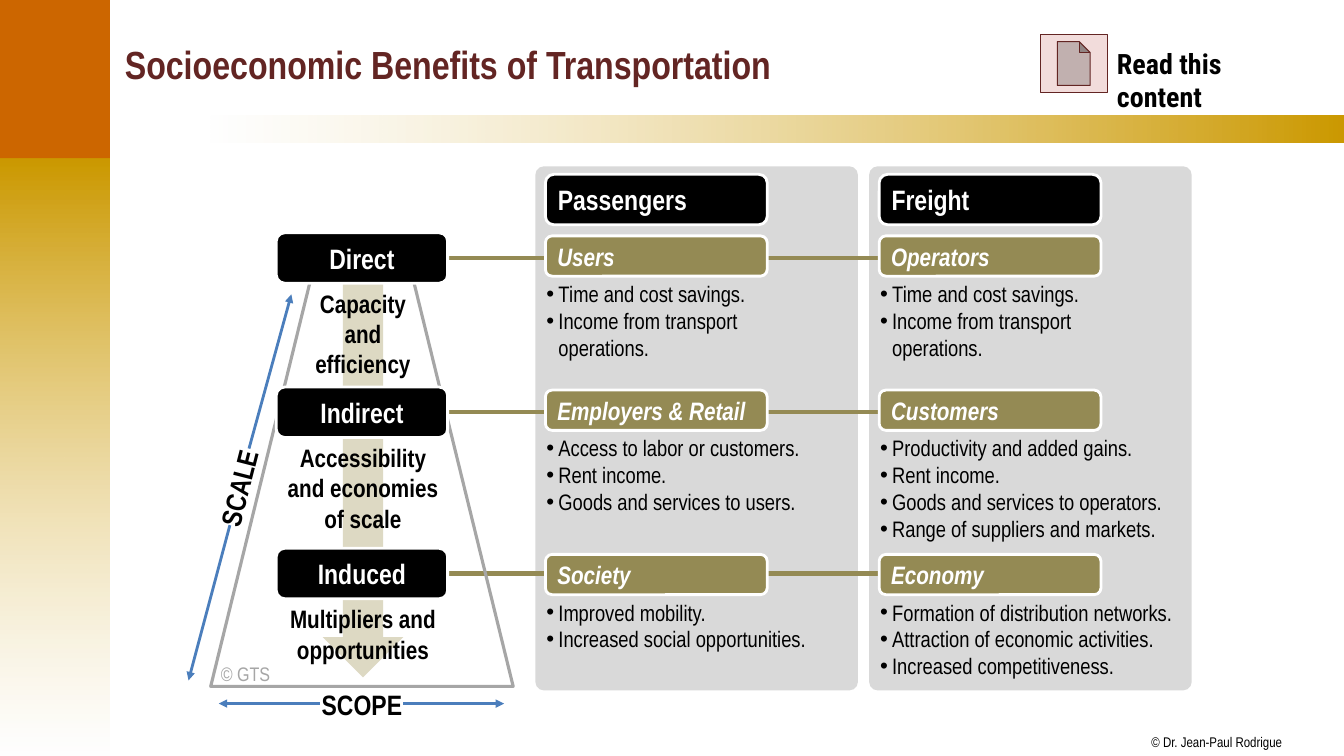
from lxml import etree
from pptx import Presentation
from pptx.dml.color import RGBColor
from pptx.enum.shapes import MSO_CONNECTOR, MSO_SHAPE
from pptx.enum.text import MSO_ANCHOR, PP_ALIGN
from pptx.oxml.ns import qn
from pptx.util import Inches, Pt

RECT, ROUNDED = MSO_SHAPE.RECTANGLE, MSO_SHAPE.ROUNDED_RECTANGLE
TRAPEZOID, DOWN_ARROW = MSO_SHAPE.TRAPEZOID, MSO_SHAPE.DOWN_ARROW
DOCUMENT_BUTTON = MSO_SHAPE.ACTION_BUTTON_DOCUMENT
STRAIGHT = MSO_CONNECTOR.STRAIGHT
LEFT, CENTER = PP_ALIGN.LEFT, PP_ALIGN.CENTER
TOP, MIDDLE = MSO_ANCHOR.TOP, MSO_ANCHOR.MIDDLE

BLACK = RGBColor(0x00, 0x00, 0x00)
WHITE = RGBColor(0xFF, 0xFF, 0xFF)
GOLD = RGBColor(0xCC, 0x99, 0x00)
ORANGE = RGBColor(0xCC, 0x66, 0x00)
MAROON = RGBColor(0x63, 0x25, 0x23)
PINK = RGBColor(0xF2, 0xDC, 0xDB)
PANEL_GRAY = RGBColor(0xD9, 0xD9, 0xD9)
OUTLINE_GRAY = RGBColor(0xA6, 0xA6, 0xA6)
OLIVE = RGBColor(0x94, 0x8A, 0x54)
SAND = RGBColor(0xDD, 0xD9, 0xC3)
BLUE = RGBColor(0x4B, 0x7E, 0xBC)

NARROW, ROBOTO = "Arial Narrow", "Roboto Condensed"

TITLE = "Socioeconomic Benefits of Transportation"
COLUMNS = ["Passengers", "Freight"]
LEVELS = [
    {
        "name": "Direct", "caption": "Capacity and efficiency",
        "caption_width": 1.2, "top": 2.31, "bar_top": 2.34, "list_width": 2.81,
        "groups": [
            ("Users", ["Time and cost savings.", "Income from transport operations."]),
            ("Operators", ["Time and cost savings.", "Income from transport operations."]),
        ],
    },
    {
        "name": "Indirect", "caption": "Accessibility and economies of scale",
        "caption_width": 1.87, "top": 3.84, "bar_top": 3.87, "list_width": 3.19,
        "groups": [
            ("Employers & Retail", ["Access to labor or customers.", "Rent income.",
                                    "Goods and services to users."]),
            ("Customers", ["Productivity and added gains.", "Rent income.",
                           "Goods and services to operators.",
                           "Range of suppliers and markets."]),
        ],
    },
    {
        "name": "Induced", "caption": "Multipliers and opportunities",
        "caption_width": 1.87, "top": 5.44, "bar_top": 5.5, "list_width": 3.19,
        "groups": [
            ("Society", ["Improved mobility.", "Increased social opportunities."]),
            ("Economy", ["Formation of distribution networks.",
                         "Attraction of economic activities.",
                         "Increased competitiveness."]),
        ],
    },
]
AXIS_ARROWS = [
    ((4, 6.98), (5, 6.98)),
    ((3.17, 6.98), (2.17, 6.98)),
    ((2.28, 5.21), (1.87, 6.75)),
    ((2.47, 4.45), (2.89, 2.92)),
]

COLUMN_LEFT, COLUMN_STEP = 5.31, 3.31
PILL_LEFT, PILL_WIDTH, PILL_HEIGHT = 2.74, 1.7, 0.5
BAR_WIDTH, BAR_HEIGHT = 2.2, 0.4
CAPTION_CENTER = 3.6

deck = Presentation()
deck.slide_width, deck.slide_height = Inches(13.33), Inches(7.5)
page = deck.slides.add_slide(deck.slide_layouts[6])


def add_block(kind, left, top, width, height, fill=None, line=None, line_width=2, adjust=None):
    block = page.shapes.add_shape(kind, Inches(left), Inches(top), Inches(width), Inches(height))
    block.shadow.inherit = False
    if fill is None:
        block.fill.background()
    else:
        block.fill.solid()
        block.fill.fore_color.rgb = fill
    if line is None:
        block.line.fill.background()
    else:
        block.line.color.rgb = line
        block.line.width = Pt(line_width)
    if adjust is not None:
        block.adjustments[0] = adjust
    return block


def add_fade(left, top, width, height, colors, angle, clear_stop, opacity):
    band = add_block(RECT, left, top, width, height)
    band.fill.gradient()
    band.fill.gradient_angle = angle
    for stop, color in zip(band.fill.gradient_stops, colors):
        stop.color.rgb = color
    swatches = list(band.element.spPr.iter(qn("a:srgbClr")))
    etree.SubElement(swatches[clear_stop], qn("a:alpha"), val=str(opacity * 1000))


def write(shape, lines, size, color=BLACK, bold=False, italic=False, font=NARROW,
          align=LEFT, anchor=TOP, wrap=True, inset=True, bullets=False):
    frame = shape.text_frame
    frame.word_wrap = wrap
    frame.vertical_anchor = anchor
    if not inset:
        frame.margin_left = frame.margin_right = frame.margin_top = frame.margin_bottom = 0
    frame.text = "\n".join(lines)
    for para in frame.paragraphs:
        para.alignment = align
        if bullets:
            layout = para._p.get_or_add_pPr()
            layout.set("marL", str(Inches(0.12)))
            layout.set("indent", str(-Inches(0.12)))
            etree.SubElement(layout, qn("a:buFont"), typeface="Arial")
            etree.SubElement(layout, qn("a:buChar"), char="•")
        for span in para.runs:
            span.font.name, span.font.size = font, Pt(size)
            span.font.bold, span.font.italic = bold, italic
            span.font.color.rgb = color


def add_text(left, top, width, height, lines, size, **style):
    box = page.shapes.add_textbox(Inches(left), Inches(top), Inches(width), Inches(height))
    write(box, lines, size, **style)
    return box


def add_line(start, end, color, width, arrow=False):
    line = page.shapes.add_connector(STRAIGHT, *[Inches(value) for value in start + end])
    line.line.color.rgb = color
    line.line.width = Pt(width)
    if arrow:
        etree.SubElement(line.line._get_or_add_ln(), qn("a:tailEnd"), type="triangle")
    etree.SubElement(line._element.spPr, qn("a:effectLst"))


add_fade(-0.02, 1.57, 1.11, 5.93, (GOLD, WHITE), 270, 1, 51)
add_fade(2.09, 1.15, 11.25, 0.26, (WHITE, GOLD), 0, 0, 50)
add_block(RECT, -0.02, -0.01, 1.11, 1.58, ORANGE)
add_text(11.42, 7.28, 1.31, 0.17, ["© Dr. Jean-Paul Rodrigue"], 10, wrap=False, inset=False)
add_text(1.14, 0.11, 11.97, 1.04, [TITLE], 28, color=MAROON, bold=True, anchor=MIDDLE)
add_block(DOCUMENT_BUTTON, 10.32, 0.34, 0.66, 0.58, PINK, MAROON, 0.75)
add_text(10.98, 0.41, 1.6, 0.75, ["Read this content"], 20, bold=True, font=ROBOTO)

for index in range(len(COLUMNS)):
    add_block(ROUNDED, COLUMN_LEFT + index * COLUMN_STEP, 1.65, 3.2, 5.2, PANEL_GRAY, adjust=0.027)
for level in LEVELS:
    middle = level["top"] + PILL_HEIGHT / 2
    add_line((4.32, middle), (10.32, middle), OLIVE, 3)
add_block(TRAPEZOID, 2.09, 2.51, 3, 4.3, line=OUTLINE_GRAY, line_width=2.25, adjust=0.352)
add_block(DOWN_ARROW, 3.2, 2.82, 0.8, 3.9, SAND)

for index, heading in enumerate(COLUMNS):
    header = add_block(ROUNDED, COLUMN_LEFT + 0.1 + index * COLUMN_STEP, 1.73,
                       BAR_WIDTH, PILL_HEIGHT, BLACK, WHITE)
    write(header, [heading], 20, color=WHITE, bold=True, anchor=MIDDLE)

for level in LEVELS:
    pill = add_block(ROUNDED, PILL_LEFT, level["top"], PILL_WIDTH, PILL_HEIGHT, BLACK, WHITE)
    write(pill, [level["name"]], 20, color=WHITE, bold=True, align=CENTER, anchor=MIDDLE)
    width = level["caption_width"]
    add_text(CAPTION_CENTER - width / 2, level["top"] + 0.5, width, 1, [level["caption"]], 18,
             bold=True, align=CENTER)
    for index, (group, benefits) in enumerate(level["groups"]):
        left = COLUMN_LEFT + index * COLUMN_STEP
        bar = add_block(ROUNDED, left + 0.1, level["bar_top"], BAR_WIDTH, BAR_HEIGHT, OLIVE, WHITE)
        write(bar, [group], 18, color=WHITE, bold=True, italic=True, anchor=MIDDLE)
        add_text(left + 0.01, level["bar_top"] + 0.39, level["list_width"], 0.91, benefits, 16,
                 bullets=True)

add_text(3.19, 6.82, 0.81, 0.34, ["SCOPE"], 20, bold=True, wrap=False, inset=False)
scale = add_text(1.98, 4.67, 0.78, 0.34, ["SCALE"], 20, bold=True, wrap=False, inset=False)
scale.rotation = 284.3
add_text(2.19, 6.57, 0.7, 0.24, ["© GTS"], 14, color=OUTLINE_GRAY, inset=False)
for start, end in AXIS_ARROWS:
    add_line(start, end, BLUE, 2, arrow=True)

deck.save("out.pptx")
